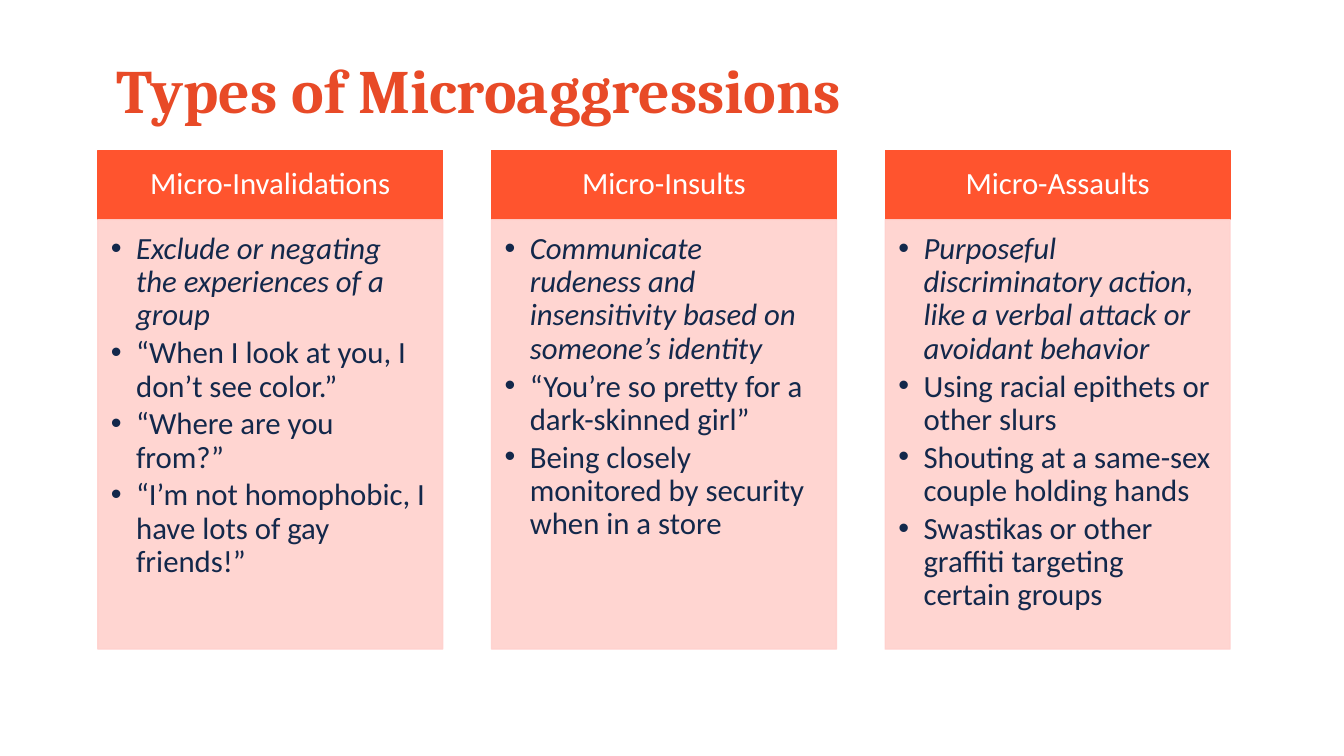
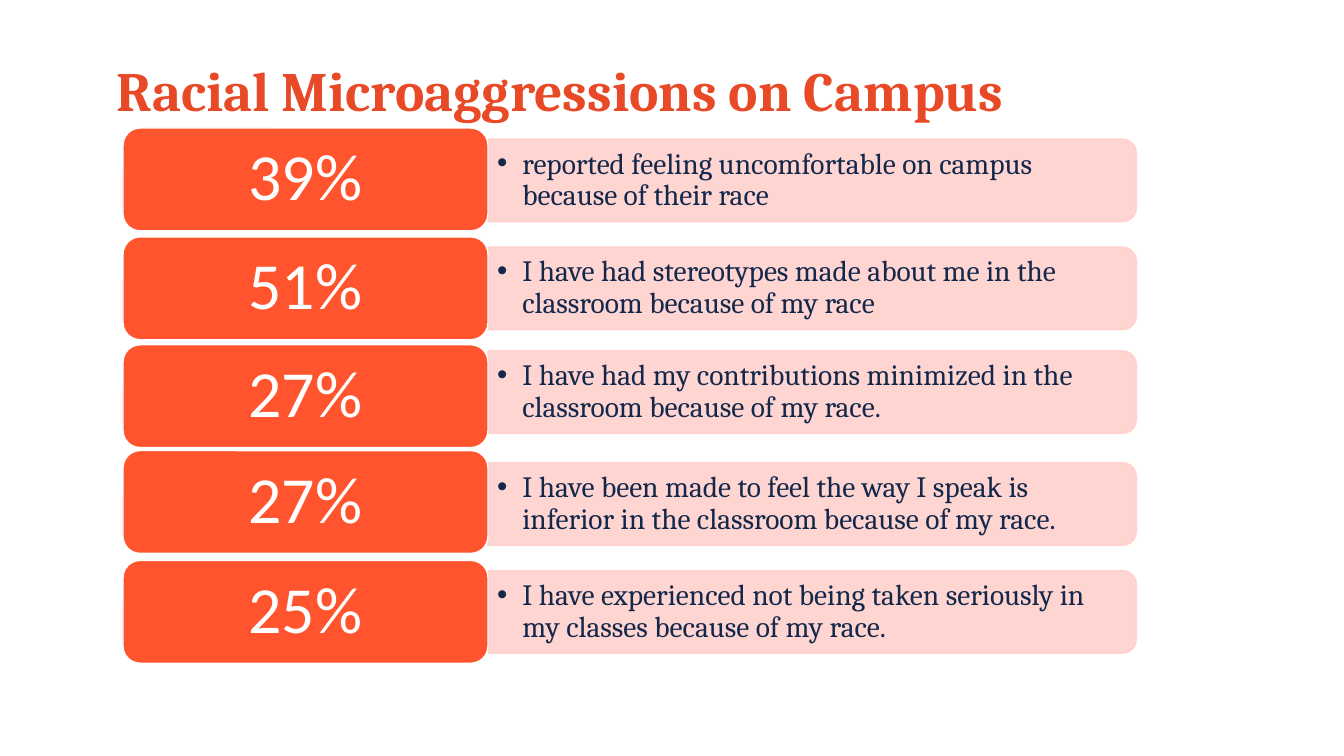
import pptx
import pptx.util
import pptx.dml.color
import pptx.enum.shapes
import pptx.enum.text
import pptx.oxml.ns
import lxml.etree

Inches = pptx.util.Inches
Shapes = pptx.enum.shapes.MSO_SHAPE
Anchor = pptx.enum.text.MSO_ANCHOR
Align = pptx.enum.text.PP_ALIGN
qn = pptx.oxml.ns.qn

COLORS = {
    "title": "E84A27",
    "orange": "FF542E",
    "pink": "FFD1CD",
    "navy": "13284B",
    "white": "FFFFFF",
}


def add_box(slide, geometry, box, fill, line, opacity=100):
    shape = slide.shapes.add_shape(geometry, *[Inches(length) for length in box])
    shape.shadow.inherit = False
    shape.fill.solid()
    shape.fill.fore_color.rgb = pptx.dml.color.RGBColor.from_string(COLORS[fill])
    shape.line.color.rgb = pptx.dml.color.RGBColor.from_string(COLORS[line])
    shape.line.width = pptx.util.Pt(1)
    if opacity < 100:
        for color in shape.element.spPr.iter(qn("a:srgbClr")):
            lxml.etree.SubElement(color, qn("a:alpha"), val=str(opacity * 1000))
    return shape


def write_text(shape, lines, font, size, color, insets, anchor=Anchor.MIDDLE,
               align=Align.LEFT, bullets=False, space_after=0):
    frame = shape.text_frame
    frame.word_wrap = True
    frame.vertical_anchor = anchor
    frame.margin_left, frame.margin_top, frame.margin_right, frame.margin_bottom = [
        Inches(inset) for inset in insets]
    for index, line in enumerate(lines):
        paragraph = frame.paragraphs[0] if index == 0 else frame.add_paragraph()
        paragraph.text = line
        paragraph.alignment = align
        paragraph.line_spacing = 0.9
        paragraph.space_after = pptx.util.Pt(space_after)
        if bullets:
            properties = paragraph._p.get_or_add_pPr()
            properties.set("marL", str(Inches(0.25)))
            properties.set("indent", str(Inches(-0.25)))
            lxml.etree.SubElement(properties, qn("a:buFont"), typeface="Arial")
            lxml.etree.SubElement(properties, qn("a:buChar"), char="•")
        paragraph.font.name = font
        paragraph.font.size = pptx.util.Pt(size)
        paragraph.font.color.rgb = pptx.dml.color.RGBColor.from_string(COLORS[color])
    return frame


presentation = pptx.Presentation()
presentation.slide_width = Inches(13.33)
presentation.slide_height = Inches(7.5)

# Slides with their titles
slides = []
for title, size in [("Types of Microaggressions", 44),
                    ("Racial Microaggressions on Campus", 39.6)]:
    slide = presentation.slides.add_slide(presentation.slide_layouts[6])
    title_box = slide.shapes.add_textbox(
        Inches(1.06), Inches(0.3), Inches(11.05), Inches(1.25))
    frame = write_text(title_box, [title], "Cambria", size, "title",
                       (0.1, 0.05, 0.1, 0.05))
    frame.paragraphs[0].font.bold = True
    slides.append(slide)
types_slide, campus_slide = slides

# Types: three columns, each a heading over a list led by its definition
columns = [
    ("Micro-Invalidations", [
        "Exclude or negating the experiences of a group",
        "“When I look at you, I don’t see color.”",
        "“Where are you from?”",
        "“I’m not homophobic, I have lots of gay friends!”"]),
    ("Micro-Insults", [
        "Communicate rudeness and insensitivity based on someone’s identity",
        "“You’re so pretty for a dark-skinned girl”",
        "Being closely monitored by security when in a store"]),
    ("Micro-Assaults", [
        "Purposeful discriminatory action, like a verbal attack or avoidant behavior",
        "Using racial epithets or other slurs",
        "Shouting at a same-sex couple holding hands",
        "Swastikas or other graffiti targeting certain groups"]),
]
column_width = 3.42
column_step = 3.905
for index, (heading, points) in enumerate(columns):
    left = 0.97 + index * column_step
    header = add_box(types_slide, Shapes.RECTANGLE, (left, 1.49, column_width, 0.69),
                     "orange", "orange")
    write_text(header, [heading], "Calibri", 22, "white", (0.17, 0.1, 0.17, 0.1),
               align=Align.CENTER)
    body = add_box(types_slide, Shapes.RECTANGLE, (left, 2.18, column_width, 4.26),
                   "pink", "pink", opacity=90)
    frame = write_text(body, points, "Calibri", 22, "navy", (0.13, 0.13, 0.17, 0.19),
                       anchor=Anchor.TOP, bullets=True, space_after=3.3)
    frame.paragraphs[0].font.italic = True

# Campus: share, top of its tile, top of its statement, statement
findings = [
    ("39%", 1.27, 1.42, "reported feeling uncomfortable on campus because of their race"),
    ("51%", 2.35, 2.49,
     "I have had stereotypes made about me in the classroom because of my race"),
    ("27%", 3.42, 3.52,
     "I have had my contributions minimized in the classroom because of my race."),
    ("27%", 4.47, 4.63,
     "I have been made to feel the way I speak is inferior in the classroom "
     "because of my race."),
    ("25%", 5.56, 5.7,
     "I have experienced not being taken seriously in my classes because of my race."),
]
bar_left, bar_length, bar_height, statement_height = 4.84, 6.43, 0.82, 0.74
for share, tile_top, statement_top, statement in findings:
    # The bar is an upright shape turned a quarter, so its rounded end faces right
    bar_center = statement_top + statement_height / 2
    bar = add_box(campus_slide, Shapes.ROUND_2_SAME_RECTANGLE,
                  (bar_left + (bar_length - bar_height) / 2, bar_center - bar_length / 2,
                   bar_height, bar_length), "pink", "pink", opacity=90)
    bar.rotation = 90
    statement_box = campus_slide.shapes.add_textbox(
        Inches(bar_left), Inches(statement_top), Inches(6.39), Inches(statement_height))
    write_text(statement_box, [statement], "Cambria", 21, "navy",
               (0.09, 0.04, 0.09, 0.04), bullets=True)
    tile = add_box(campus_slide, Shapes.ROUNDED_RECTANGLE, (1.22, tile_top, 3.62, 1.02),
                   "orange", "white")
    write_text(tile, [share], "Calibri", 47, "white", (0.2, 0.1, 0.2, 0.1),
               align=Align.CENTER)

presentation.save("out.pptx")
